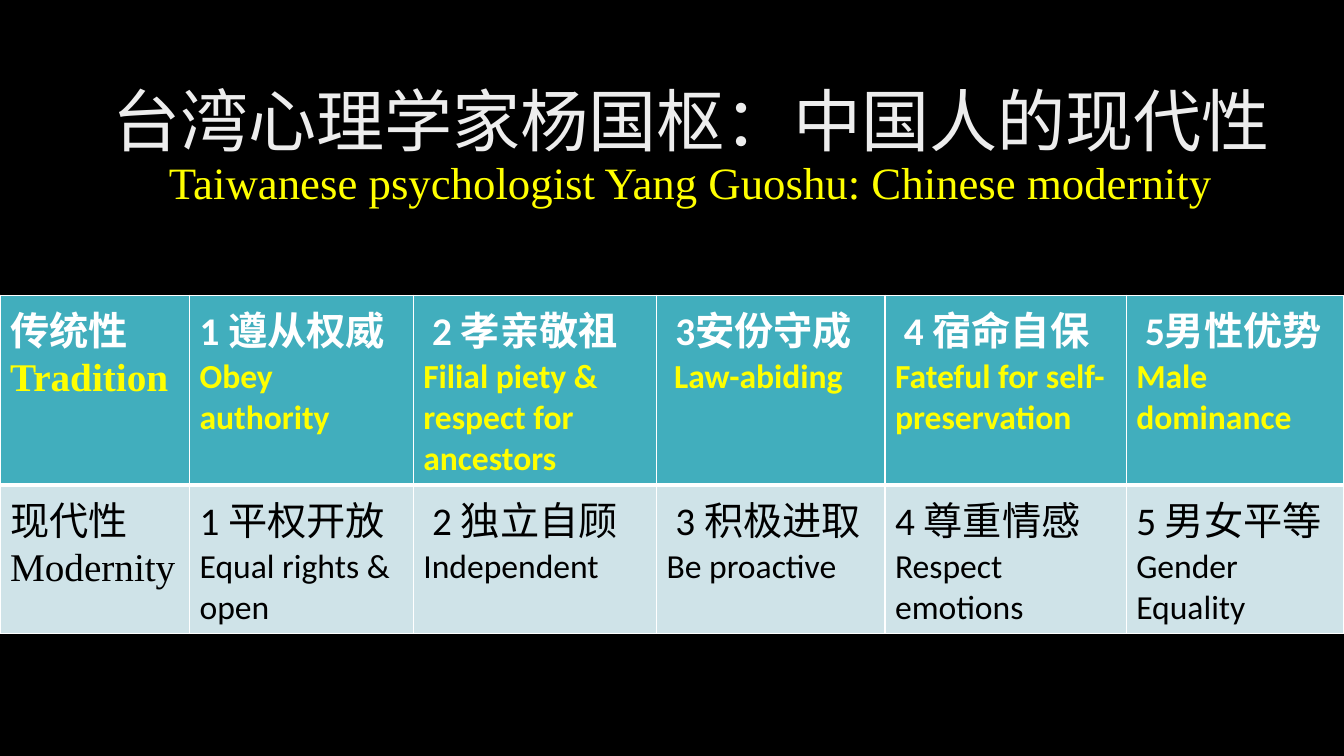
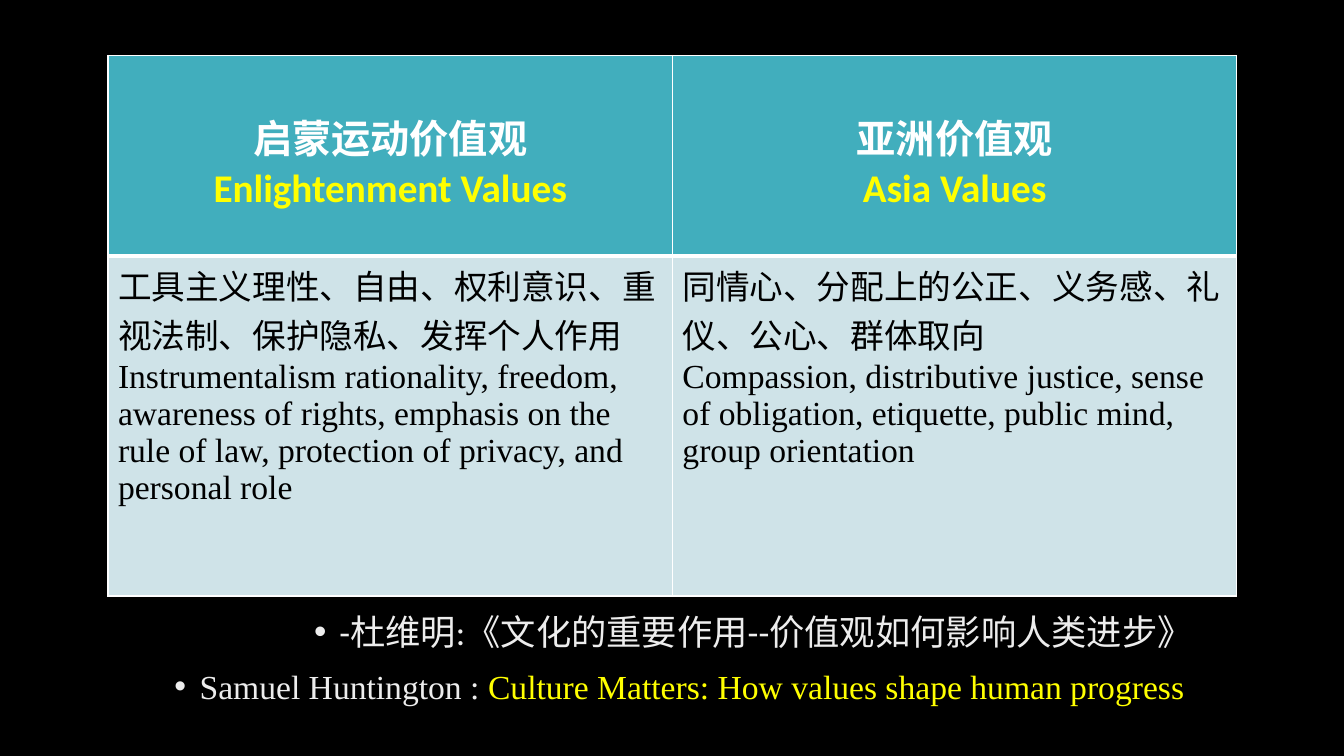
from dataclasses import dataclass

from lxml.etree import SubElement
from pptx import Presentation
from pptx.dml.color import RGBColor
from pptx.enum.text import MSO_ANCHOR, MSO_AUTO_SIZE, PP_ALIGN
from pptx.oxml.ns import qn
from pptx.util import Inches, Pt

WIDTH, HEIGHT = 13.33, 7.5
TITLE_AND_CONTENT, TITLE_ONLY = 1, 5


@dataclass(frozen=True)
class Theme:
    """Colours, typefaces and type sizes of the deck."""
    background: RGBColor = RGBColor(0, 0, 0)
    light: RGBColor = RGBColor(0xED, 0xED, 0xED)
    white: RGBColor = RGBColor(0xFF, 0xFF, 0xFF)
    dark: RGBColor = RGBColor(0, 0, 0)
    accent: RGBColor = RGBColor(0xFF, 0xFF, 0)
    header: RGBColor = RGBColor(0x41, 0xAE, 0xBD)
    body: RGBColor = RGBColor(0xCF, 0xE3, 0xE8)
    sans: str = "Calibri"
    serif: str = "Times New Roman"
    chinese: str = "Noto Sans CJK SC"
    title: float = 48.6
    subtitle: float = 32
    heading: float = 28
    citation: float = 25.2
    text: float = 24


THEME = Theme()

TRADITION = [
    ("传统性", "Tradition"),
    ("1 遵从权威", "Obey authority"),
    (" 2 孝亲敬祖", "Filial piety & respect for ancestors"),
    (" 3安份守成", " Law-abiding"),
    (" 4 宿命自保", "Fateful for self-preservation"),
    (" 5男性优势", "Male dominance"),
]
MODERNITY = [
    ("现代性", "Modernity"),
    ("1 平权开放", "Equal rights & open"),
    (" 2 独立自顾", "Independent"),
    (" 3 积极进取", "Be proactive"),
    ("4 尊重情感", "Respect emotions"),
    ("5 男女平等", "Gender Equality"),
]
VALUE_NAMES = [
    ("启蒙运动价值观", "Enlightenment Values"),
    ("亚洲价值观", "Asia Values"),
]
VALUE_LISTS = [
    ("工具主义理性、自由、权利意识、重视法制、保护隐私、发挥个人作用",
     "Instrumentalism rationality, freedom, awareness of rights, emphasis on the "
     "rule of law, protection of privacy, and personal role"),
    ("同情心、分配上的公正、义务感、礼仪、公心、群体取向",
     "Compassion, distributive justice, sense of obligation, etiquette, "
     "public mind, group orientation"),
]


def across(percent):
    """Return a percentage of the slide width."""
    return Inches(WIDTH * percent / 100)


def down(percent):
    """Return a percentage of the slide height."""
    return Inches(HEIGHT * percent / 100)


def style(font, face, size, color, bold=False):
    """Format a font, with the Chinese typeface for East Asian text."""
    font.size, font.bold = Pt(size), bold
    font.color.rgb = color
    font.name = face
    SubElement(font._rPr, qn("a:ea")).set("typeface", THEME.chinese)


def place(placeholder, left, top, width, height):
    """Position a placeholder by slide percentages and stop it from shrinking."""
    placeholder.left, placeholder.top = across(left), down(top)
    placeholder.width, placeholder.height = across(width), down(height)
    placeholder.text_frame.word_wrap = True
    placeholder.text_frame.auto_size = MSO_AUTO_SIZE.NONE


def add_run(paragraph, text, face, size, color):
    """Append a formatted run."""
    run = paragraph.add_run()
    run.text = text
    style(run.font, face, size, color)


def set_title(slide, chinese, english):
    """Write the two-language title."""
    place(slide.shapes.title, 2.8, 10, 97.2, 19.3)
    frame = slide.shapes.title.text_frame
    frame.vertical_anchor = MSO_ANCHOR.MIDDLE
    paragraph = frame.paragraphs[0]
    paragraph.alignment = PP_ALIGN.CENTER
    paragraph.line_spacing = 0.9
    add_run(paragraph, chinese, THEME.chinese, THEME.title, THEME.light)
    paragraph.add_line_break()
    add_run(paragraph, english, THEME.serif, THEME.subtitle, THEME.accent)


def set_borders(cell, is_header):
    """Draw white cell edges, heavier between header and body."""
    top, bottom = (1, 3) if is_header else (3, 1)
    for edge, points in (("lnL", 1), ("lnR", 1), ("lnT", top), ("lnB", bottom)):
        line = SubElement(cell._tc.get_or_add_tcPr(), qn(f"a:{edge}"), w=str(Pt(points)))
        fill = SubElement(line, qn("a:solidFill"))
        SubElement(fill, qn("a:srgbClr"), val=str(THEME.white))


def fill_cell(cell, pair, fonts, is_header, alignment):
    """Write a Chinese line and its English line into a cell."""
    set_borders(cell, is_header)
    cell.fill.solid()
    cell.fill.fore_color.rgb = THEME.header if is_header else THEME.body
    colors = (THEME.white, THEME.accent) if is_header else (THEME.dark, THEME.dark)
    frame = cell.text_frame
    for index, (text, (face, size), color) in enumerate(zip(pair, fonts, colors)):
        paragraph = frame.add_paragraph() if index else frame.paragraphs[0]
        paragraph.text = text
        paragraph.alignment = alignment
        style(paragraph.font, face, size, color, is_header)


def add_value_table(slide, rows, left, top, columns, heights, fonts_at,
                    header_alignment=PP_ALIGN.LEFT):
    """Add a table with one header row and one body row, and return it."""
    table = slide.shapes.add_table(
        len(rows), len(columns), across(left), down(top),
        across(sum(columns)), down(sum(heights))).table
    table.horz_banding = False
    for column, width in zip(table.columns, columns):
        column.width = across(width)
    for r, (pairs, height) in enumerate(zip(rows, heights)):
        table.rows[r].height = down(height)
        alignment = PP_ALIGN.LEFT if r else header_alignment
        for c, pair in enumerate(pairs):
            fill_cell(table.cell(r, c), pair, fonts_at(r, c), r == 0, alignment)
    return table


def modernity_fonts(row, column):
    """Return the fonts of the modernity table: serif English in the label column."""
    english = (THEME.sans, THEME.text) if column else (THEME.serif, THEME.heading)
    return (THEME.sans, THEME.heading), english


def values_fonts(row, column):
    """Return the fonts of the values table: serif English in the body row."""
    if row:
        return (THEME.sans, THEME.text), (THEME.serif, THEME.text)
    return ((THEME.sans, THEME.heading),) * 2


def add_citations(body, citations):
    """Write right-aligned bullets, each a list of formatted runs."""
    place(body, 5.55, 80, 83.95, 17.3)
    frame = body.text_frame
    for index, runs in enumerate(citations):
        paragraph = frame.add_paragraph() if index else frame.paragraphs[0]
        properties = paragraph._p.get_or_add_pPr()
        properties.set("marL", str(Inches(0.25)))
        properties.set("indent", str(Inches(-0.25)))
        paragraph.alignment = PP_ALIGN.RIGHT
        paragraph.space_before = Pt(10 if index else 0)
        for run in runs:
            add_run(paragraph, *run)


def build_modernity(deck):
    """Build the slide on tradition and modernity."""
    slide = deck.slides.add_slide(deck.slide_layouts[TITLE_ONLY])
    set_title(slide, "台湾心理学家杨国枢：中国人的现代性",
              "Taiwanese psychologist Yang Guoshu: Chinese modernity")
    add_value_table(slide, [TRADITION, MODERNITY], 0, 39.05,
                    [14.1, 16.65, 18.1, 17, 17.95, 16.2], [25.05, 19.7],
                    modernity_fonts)


def build_values(deck):
    """Build the slide on Enlightenment and Asian values."""
    slide = deck.slides.add_slide(deck.slide_layouts[TITLE_AND_CONTENT])
    title = slide.shapes.title.element
    title.getparent().remove(title)
    add_citations(slide.placeholders[1], [
        [("-杜维明:《文化的重要作用--价值观如何影响人类进步》",
          THEME.sans, THEME.citation, THEME.light)],
        [("Samuel Huntington : ", THEME.serif, THEME.text, THEME.light),
         ("Culture Matters: How values shape human progress ",
          THEME.serif, THEME.text, THEME.accent)],
    ])
    table = add_value_table(slide, [VALUE_NAMES, VALUE_LISTS], 8.03, 7.33,
                            [42, 42], [26.5, 45], values_fonts, PP_ALIGN.CENTER)
    for cell in table.rows[0].cells:
        cell.margin_top = down(7)


def main():
    """Build and save the deck."""
    deck = Presentation()
    deck.slide_width, deck.slide_height = Inches(WIDTH), Inches(HEIGHT)
    background = deck.slide_master.background.fill
    background.solid()
    background.fore_color.rgb = THEME.background
    build_modernity(deck)
    build_values(deck)
    deck.save("out.pptx")


if __name__ == "__main__":
    main()
